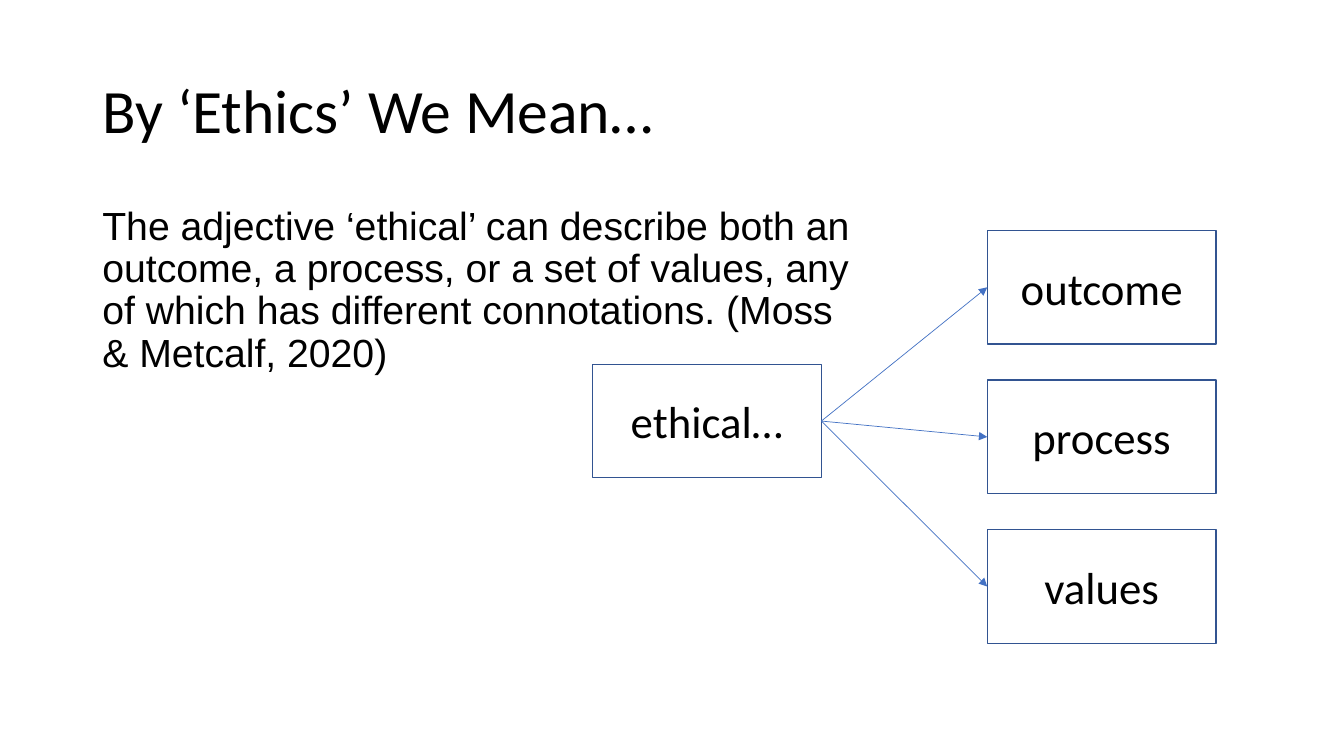
"""Builds the slide on what the word 'ethical' can describe."""
from lxml.etree import SubElement
from pptx import Presentation
from pptx.dml.color import RGBColor as Rgb
from pptx.enum.shapes import MSO_CONNECTOR as Connector, MSO_SHAPE as Preset
from pptx.enum.text import MSO_ANCHOR as Anchor, PP_ALIGN as Align
from pptx.oxml.ns import qn
from pptx.util import Cm, Pt

COLOURS = {"text": "000000", "border": "325491", "arrow": "4472C4"}
FORMATS = {
    "title": {
        "font": {"name": "Calibri", "size": Pt(44)},
        "paragraph": {"line_spacing": 0.9},
        "frame": {"vertical_anchor": Anchor.MIDDLE},
    },
    "body": {
        "font": {"name": "Arial", "size": Pt(28)},
        "paragraph": {"line_spacing": 0.9, "space_after": Pt(10)},
        "frame": {"vertical_anchor": Anchor.TOP},
    },
    "box": {
        "font": {"name": "Calibri", "size": Pt(32)},
        "paragraph": {"alignment": Align.CENTER},
        "frame": {"vertical_anchor": Anchor.MIDDLE},
    },
}
BOX_WIDTH, BOX_HEIGHT = 5.77, 2.86
MEANING_LEFT, MEANING_TOP, MEANING_STEP = 24.88, 5.81, 3.77
RIGHT_SITE, LEFT_SITE = 3, 1


class EthicsSlide:
    def __init__(self, slide, colours, formats):
        self.shapes = slide.shapes
        self.colours = {name: Rgb.from_string(value) for name, value in colours.items()}
        self.formats = formats

    def set_wording(self, frame, wording, style):
        paragraph = frame.paragraphs[0]
        run = paragraph.add_run()
        run.text = wording
        run.font.color.rgb = self.colours["text"]
        frame.word_wrap = True
        targets = {"font": run.font, "paragraph": paragraph, "frame": frame}
        for part, values in self.formats[style].items():
            for attribute, value in values.items():
                setattr(targets[part], attribute, value)

    def text(self, wording, style, left, top, width, height):
        area = self.shapes.add_textbox(Cm(left), Cm(top), Cm(width), Cm(height))
        self.set_wording(area.text_frame, wording, style)

    def box(self, wording, left, top):
        box = self.shapes.add_shape(
            Preset.RECTANGLE, Cm(left), Cm(top), Cm(BOX_WIDTH), Cm(BOX_HEIGHT))
        box.shadow.inherit = False
        box.fill.background()
        box.line.color.rgb = self.colours["border"]
        box.line.width = Pt(1)
        self.set_wording(box.text_frame, wording, "box")
        return box

    def arrow(self, source, target):
        arrow = self.shapes.add_connector(Connector.STRAIGHT, 0, 0, 0, 0)
        arrow.begin_connect(source, RIGHT_SITE)
        arrow.end_connect(target, LEFT_SITE)
        arrow.line.color.rgb = self.colours["arrow"]
        arrow.line.width = Pt(0.5)
        properties = arrow._element.spPr
        SubElement(properties.find(qn("a:ln")), qn("a:tailEnd"), type="triangle")
        SubElement(properties, qn("a:effectLst"))


def main():
    deck = Presentation()
    deck.slide_width, deck.slide_height = Cm(33.87), Cm(19.05)
    page = EthicsSlide(deck.slides.add_slide(deck.slide_layouts[6]), COLOURS, FORMATS)

    page.text("By ‘Ethics’ We Mean…", "title", 2.33, 1.01, 29.21, 3.68)
    page.text(
        "The adjective ‘ethical’ can describe both an outcome, a process, "
        "or a set of values, any of which has different connotations. "
        "(Moss & Metcalf, 2020)",
        "body", 2.33, 5.07, 19.69, 12.09)

    ethical = page.box("ethical…", 14.93, 9.18)
    meanings = [
        page.box(meaning, MEANING_LEFT, MEANING_TOP + row * MEANING_STEP)
        for row, meaning in enumerate(("outcome", "process", "values"))
    ]
    for meaning in meanings:
        page.arrow(ethical, meaning)

    deck.save("out.pptx")


if __name__ == "__main__":
    main()
